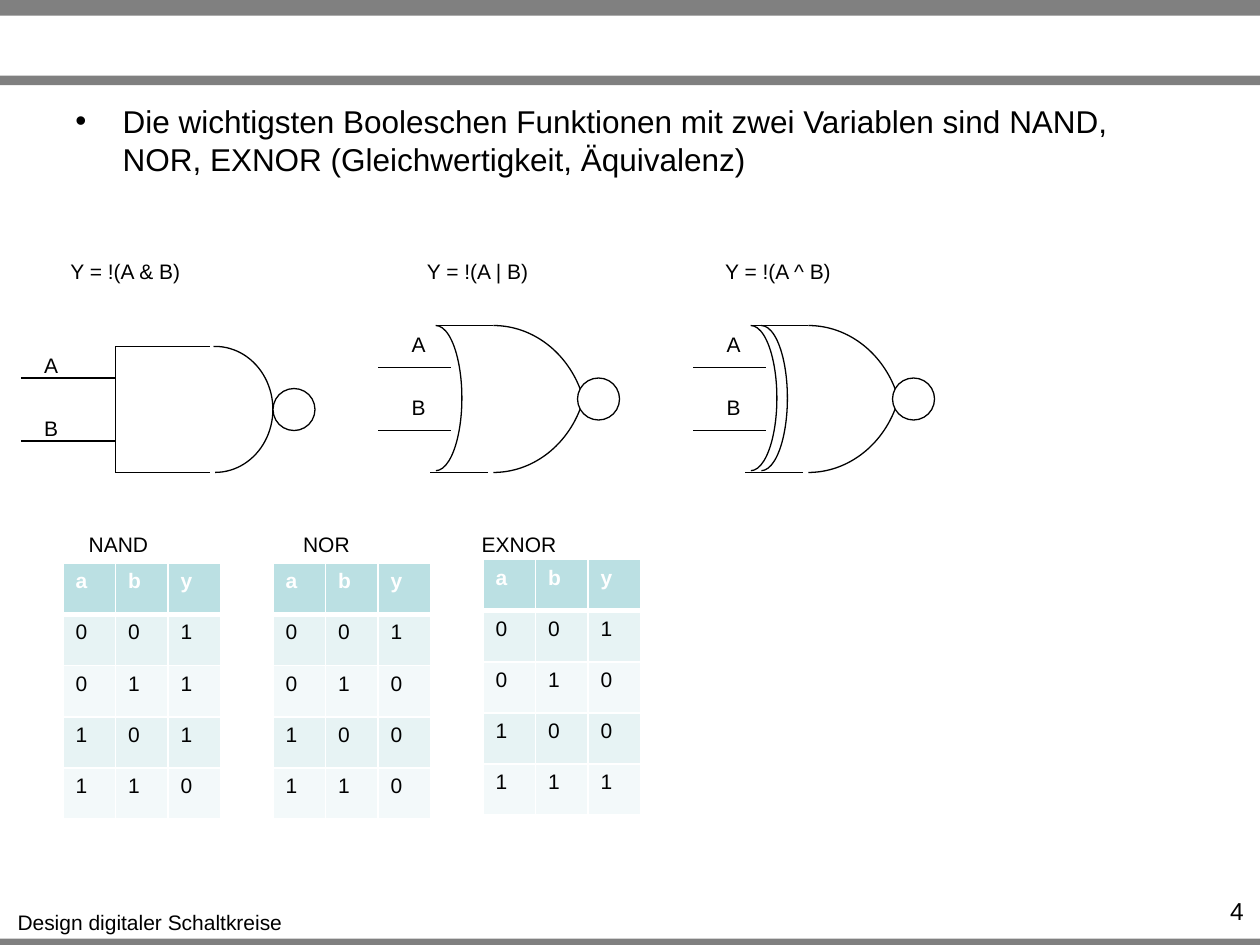
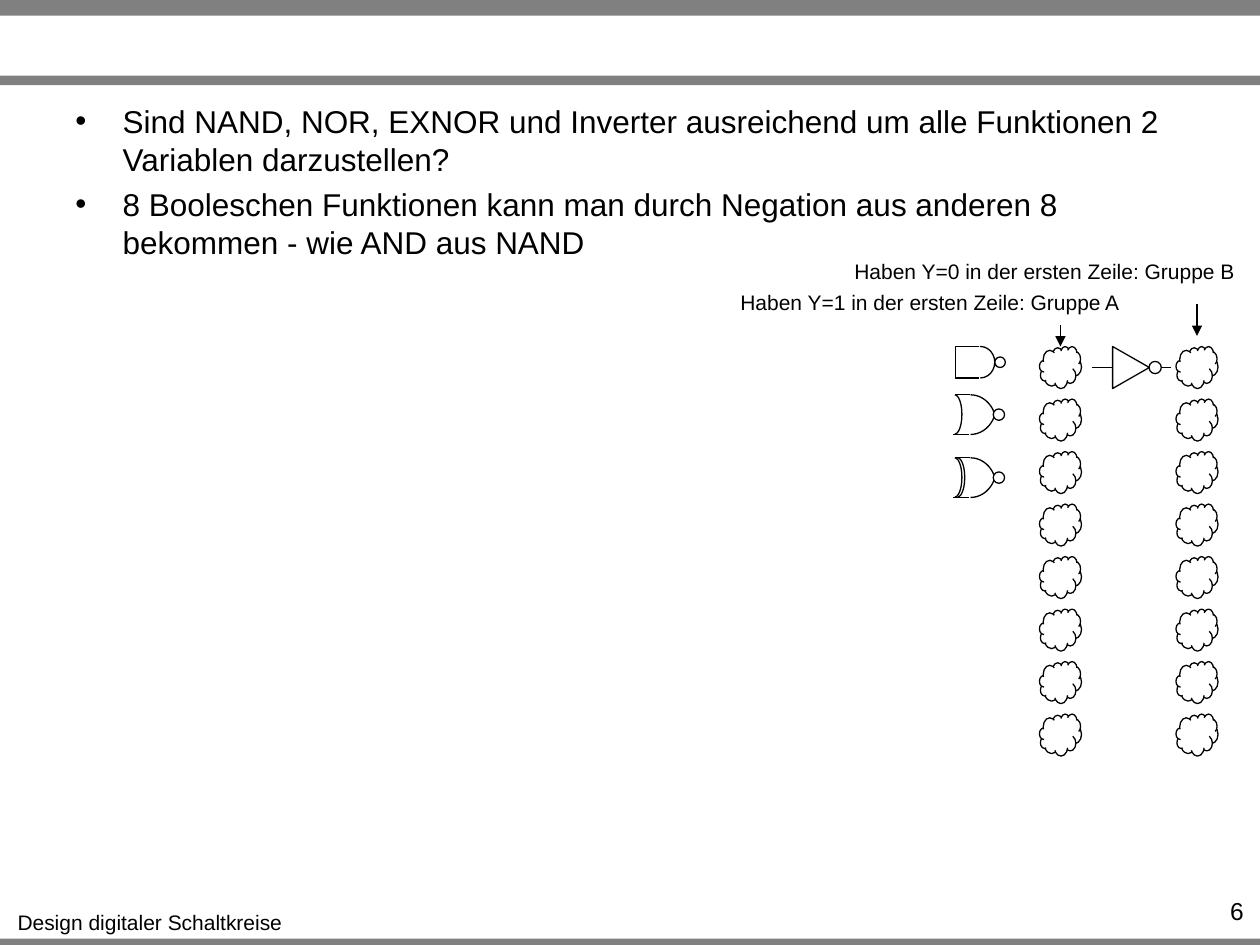
"""Build two slides on NAND, NOR and EXNOR as basic Boolean functions."""
from dataclasses import dataclass

from lxml import etree
from pptx import Presentation
from pptx import util as u
from pptx.dml.color import RGBColor
from pptx.enum import shapes, text
from pptx.oxml import ns

Pt = u.Pt
GEO = shapes.MSO_SHAPE


@dataclass(frozen=True)
class Theme:
    font: str = "Arial"
    ink: str = "000000"
    paper: str = "FFFFFF"
    band: str = "808080"
    header: str = "BBE0E3"
    stripes: tuple = ("E7F3F4", "F3F9FA")
    body: int = 18
    page: int = 14
    label: int = 12
    stroke: float = 0.75
    rule: int = 1
    header_rule: int = 3


THEME = Theme()
WIDTH, HEIGHT = 720, 540
FOOTER = "Design digitaler Schaltkreise"
BANDS = [(0, 9), (43.2, 5.4), (536.4, 5.4)]
BUBBLE = 24
LABEL_HEIGHT = 21.6
INPUTS = ("A", "B")
INPUT_STEP = 36
INPUT_WIDTH = 22.3

BASICS = {
    "page": "4",
    "bullets": ["Die wichtigsten Booleschen Funktionen mit zwei Variablen sind "
                "NAND, NOR, EXNOR (Gleichwertigkeit, Äquivalenz)"],
}
COVERAGE = {
    "page": "6",
    "bullets": ["Sind NAND, NOR, EXNOR und Inverter ausreichend um alle "
                "Funktionen 2 Variablen darzustellen?",
                "8 Booleschen Funktionen kann man durch Negation aus anderen 8 "
                "bekommen - wie AND aus NAND"],
}

GATES = [
    {"name": "NAND", "name_at": (43.2, 49), "outputs": "1110", "table_top": 322,
     "formula": "Y = !(A & B)", "formula_at": (32.4, 78.5),
     "origin": (66, 198), "leads": (-54, 0, 18), "input_dx": -48},
    {"name": "NOR", "name_at": (165.6, 41.8), "outputs": "1000", "table_top": 322,
     "formula": "Y = !(A | B)", "formula_at": (236.2, 73.4),
     "origin": (228, 186), "leads": (-12, 30, 24), "input_dx": 0},
    {"name": "EXNOR", "name_at": (267.8, 57.6), "outputs": "1001", "table_top": 319.8,
     "formula": "Y = !(A ^ B)", "formula_at": (406.8, 75.6),
     "origin": (408, 186), "leads": (-12, 30, 24), "input_dx": 0},
]
SMALL_GATES = [("NAND", 546, 198, 0.25), ("NOR", 540, 225.6, 0.27),
               ("EXNOR", 540, 261.6, 0.27)]
GROUPS = [
    {"caption": "Haben Y=1 in der ersten Zeile: Gruppe A", "caption_at": (414.7, 162),
     "cloud_left": 594, "arrow": (186, 198)},
    {"caption": "Haben Y=0 in der ersten Zeile: Gruppe B", "caption_at": (480.2, 144),
     "cloud_left": 672, "arrow": (174, 192)},
]
CAPTION_WIDTH = 233.6
CLOUD_COUNT, CLOUD_TOP, CLOUD_STEP, CLOUD_SIZE = 8, 198, 30, 24

OR_ARC = (162, 201.69)
BACK_ARC = (162, 53.88)
AND_ARC = (162, 54.9)
OR_PARTS = {
    "arcs": [((6, 0, 30, 83), BACK_ARC, False),
             ((0, 0, 108, 120), OR_ARC, False),
             ((0, -36, 108, 120), OR_ARC, True)],
    "lines": [(54, 0, 21, 0), (51, 84, 18, 84)],
    "bubble": (102, 30),
}
SYMBOLS = {
    "NAND": {"arcs": [((24, 0, 66, 72), AND_ARC, True)],
             "lines": [(0, 0, 0, 72), (0, 0, 54, 0), (0, 72, 54, 72)],
             "bubble": (90, 24)},
    "NOR": OR_PARTS,
    "EXNOR": {**OR_PARTS,
              "arcs": OR_PARTS["arcs"] + [((12, 0, 30, 83), BACK_ARC, False)]},
}


def rgb(code):
    return RGBColor.from_string(code)


def add_run(paragraph, words, size, color=THEME.ink, bold=False):
    run = paragraph.add_run()
    run.text = words
    run.font.name, run.font.size, run.font.bold = THEME.font, Pt(size), bold
    run.font.color.rgb = rgb(color)


def add_figure(canvas, kind, box, fill=None, line=THEME.ink):
    figure = canvas.add_shape(kind, *map(Pt, box))
    figure.shadow.inherit = False
    if fill:
        figure.fill.solid()
        figure.fill.fore_color.rgb = rgb(fill)
    else:
        figure.fill.background()
    if line:
        figure.line.color.rgb = rgb(line)
        figure.line.width = Pt(THEME.stroke)
    else:
        figure.line.fill.background()
    return figure


def add_arc(canvas, box, angles, flipped):
    arc = add_figure(canvas, GEO.ARC, box)
    arc.adjustments[0], arc.adjustments[1] = angles
    if flipped:
        arc._element.spPr.xfrm.set("flipV", "1")


def add_line(canvas, ends, arrow=False):
    line = canvas.add_connector(shapes.MSO_CONNECTOR.STRAIGHT, *map(Pt, ends))
    line.line.color.rgb = rgb(THEME.ink)
    line.line.width = Pt(THEME.stroke)
    if arrow:
        etree.SubElement(line.line._get_or_add_ln(), ns.qn("a:tailEnd"), type="triangle")
    etree.SubElement(line._element.spPr, ns.qn("a:effectLst"))


def add_label(canvas, words, left, top, width):
    label = canvas.add_textbox(*map(Pt, (left, top, width, LABEL_HEIGHT)))
    frame = label.text_frame
    frame.word_wrap = False
    frame.auto_size = text.MSO_AUTO_SIZE.SHAPE_TO_FIT_TEXT
    frame.paragraphs[0].alignment = text.PP_ALIGN.CENTER
    add_run(frame.paragraphs[0], words, THEME.label)


def add_bullets(canvas, bullets):
    frame = canvas.add_textbox(Pt(36), Pt(54.7), Pt(648), Pt(179.3)).text_frame
    frame.word_wrap = True
    for index, words in enumerate(bullets):
        paragraph = frame.add_paragraph() if index else frame.paragraphs[0]
        properties = paragraph._p.get_or_add_pPr()
        properties.set("marL", str(Pt(27)))
        properties.set("indent", str(-Pt(27)))
        etree.SubElement(properties, ns.qn("a:buFont"), typeface=THEME.font)
        etree.SubElement(properties, ns.qn("a:buChar"), char="•")
        if index:
            paragraph.space_before = Pt(4.2)
        add_run(paragraph, words, THEME.body)


def start_slide(deck, content):
    canvas = deck.slides.add_slide(deck.slide_layouts[6]).shapes
    for top, height in BANDS:
        add_figure(canvas, GEO.RECTANGLE, (0, top, WIDTH, height), THEME.band, None)
    add_label(canvas, FOOTER, 2.2, 516.2, 167)
    add_bullets(canvas, content["bullets"])
    page = canvas.add_textbox(Pt(655.2), Pt(508.3), Pt(62.6), Pt(17.3)).text_frame
    page.word_wrap = True
    page.paragraphs[0].alignment = text.PP_ALIGN.RIGHT
    add_run(page.paragraphs[0], content["page"], THEME.page)
    return canvas


def add_symbol(canvas, name, left, top, scale=1):
    symbol, parts = canvas.add_group_shape().shapes, SYMBOLS[name]

    def place(x, y):
        return left + x * scale, top + y * scale

    for (x, y, width, height), angles, flipped in parts["arcs"]:
        add_arc(symbol, (*place(x, y), width * scale, height * scale), angles, flipped)
    for x1, y1, x2, y2 in parts["lines"]:
        add_line(symbol, (*place(x1, y1), *place(x2, y2)))
    size = BUBBLE * scale
    add_figure(symbol, GEO.OVAL, (*place(*parts["bubble"]), size, size), THEME.paper)


def set_border(cell, side, width):
    border = etree.SubElement(cell._tc.get_or_add_tcPr(), ns.qn(f"a:ln{side}"),
                              w=str(Pt(width)))
    fill = etree.SubElement(border, ns.qn("a:solidFill"))
    etree.SubElement(fill, ns.qn("a:srgbClr"), val=THEME.paper)


def add_truth_table(canvas, outputs, left, top):
    rows = ["aby"] + [f"{i:02b}{y}" for i, y in enumerate(outputs)]
    table = canvas.add_table(len(rows), 3, Pt(left), Pt(top), Pt(90), Pt(146)).table
    table.first_row = table.horz_banding = False
    for column in table.columns:
        column.width = Pt(30)
    for r, values in enumerate(rows):
        table.rows[r].height = Pt(29.2)
        for c, value in enumerate(values):
            cell = table.cell(r, c)
            for side in "LRTB":
                thick = (r, side) in ((0, "B"), (1, "T"))
                set_border(cell, side, THEME.header_rule if thick else THEME.rule)
            cell.fill.solid()
            cell.fill.fore_color.rgb = rgb(THEME.stripes[(r - 1) % 2] if r else THEME.header)
            add_run(cell.text_frame.paragraphs[0], value, THEME.label,
                    THEME.ink if r else THEME.paper, bold=not r)


def add_gate(canvas, gate, table_left):
    left, top = gate["origin"]
    start, end, first = gate["leads"]
    for index, name in enumerate(INPUTS):
        drop = index * INPUT_STEP
        y = top + first + drop
        add_line(canvas, (left + start, y, left + end, y))
        add_label(canvas, name, left + gate["input_dx"], top + drop, INPUT_WIDTH)
    add_symbol(canvas, gate["name"], left, top)
    for words, (x, width), y in ((gate["formula"], gate["formula_at"], 144),
                                 (gate["name"], gate["name_at"], 300)):
        add_label(canvas, words, x, y, width)
    add_truth_table(canvas, gate["outputs"], table_left, gate["table_top"])


def add_inverter(canvas):
    inverter = canvas.add_group_shape().shapes
    add_line(inverter, (656.6, 210, 669, 210))
    add_figure(inverter, GEO.OVAL, (656.6, 206.5, 7, 7), THEME.paper)
    add_figure(inverter, GEO.ISOSCELES_TRIANGLE, (634.3, 199.5, 24, 21)).rotation = 90
    add_line(inverter, (624, 210, 636, 210))


def add_group(canvas, group):
    left, (start, end) = group["cloud_left"], group["arrow"]
    for index in range(CLOUD_COUNT):
        top = CLOUD_TOP + index * CLOUD_STEP
        add_figure(canvas, GEO.CLOUD, (left, top, CLOUD_SIZE, CLOUD_SIZE))
    add_label(canvas, group["caption"], *group["caption_at"], CAPTION_WIDTH)
    middle = left + CLOUD_SIZE / 2
    add_line(canvas, (middle, start, middle, end), arrow=True)


def main():
    deck = Presentation()
    deck.slide_width, deck.slide_height = Pt(WIDTH), Pt(HEIGHT)

    basics = start_slide(deck, BASICS)
    for index, gate in enumerate(GATES):
        add_gate(basics, gate, 36 + index * 120)

    coverage = start_slide(deck, COVERAGE)
    for group in GROUPS:
        add_group(coverage, group)
    add_inverter(coverage)
    for name, left, top, scale in SMALL_GATES:
        add_symbol(coverage, name, left, top, scale)

    deck.save("out.pptx")


if __name__ == "__main__":
    main()
